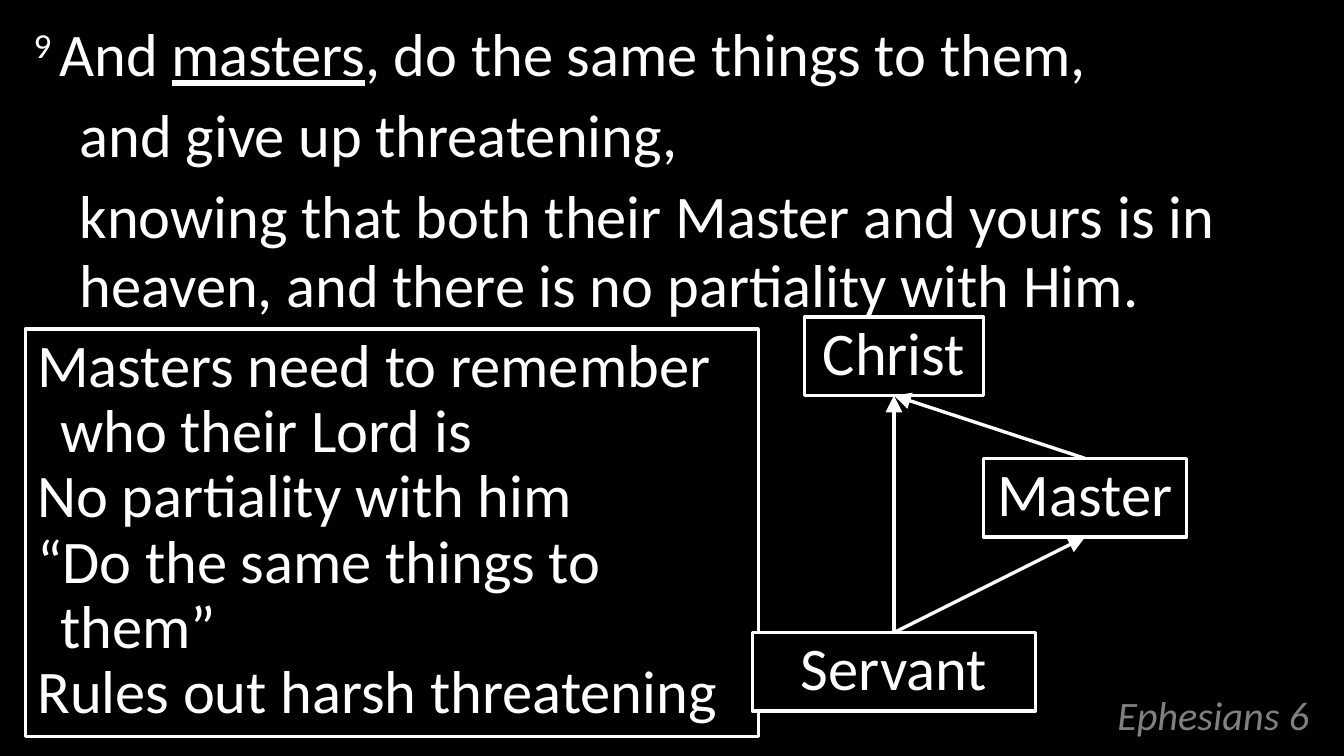
from dataclasses import dataclass

from lxml.etree import SubElement
from pptx import Presentation
from pptx.dml.color import RGBColor
from pptx.enum.shapes import MSO_CONNECTOR, MSO_SHAPE
from pptx.enum.text import MSO_ANCHOR, PP_ALIGN
from pptx.oxml.ns import qn
from pptx.shapes.autoshape import Shape
from pptx.slide import Slide
from pptx.util import Emu, Pt

PX = 9144
TOP, BOTTOM = 0, 2


@dataclass(frozen=True)
class Theme:
    font: str = "Calibri"
    back: RGBColor = RGBColor(0, 0, 0)
    ink: RGBColor = RGBColor(255, 255, 255)
    muted: RGBColor = RGBColor(128, 128, 128)
    text_size: int = 36
    reference_size: int = 24
    line_width: int = 2


@dataclass(frozen=True)
class Area:
    left: int
    top: int
    width: int
    height: int

    def emu(self) -> list[Emu]:
        return [px(v) for v in (self.left, self.top, self.width, self.height)]


@dataclass(frozen=True)
class Style:
    size: int
    color: RGBColor
    align: PP_ALIGN = PP_ALIGN.LEFT
    spacing: float = 0.9
    before: float = 0
    margin: int = 0
    indent: int = 0
    italic: bool = False


@dataclass(frozen=True)
class Span:
    text: str
    underline: bool = False
    raised: bool = False


@dataclass(frozen=True)
class Box:
    key: str
    area: Area
    lines: tuple[str, ...]
    align: PP_ALIGN = PP_ALIGN.CENTER


@dataclass(frozen=True)
class Arrow:
    start: str
    start_side: int
    end: str
    end_side: int


THEME = Theme()

VERSE_AREA = Area(18, 13, 1074, 255)
VERSE = (
    (Span("9 ", raised=True), Span("And "), Span("masters", underline=True),
     Span(", do the same things to them,")),
    (Span("and give up threatening,"),),
    (Span("knowing that both their Master and yours is in heaven, "
          "and there is no partiality with Him."),),
)
REFERENCE_AREA = Area(705, 562, 387, 53)
REFERENCE = "Ephesians 6"

BOXES = (
    Box("master", Area(813, 379, 168, 65), ("Master",)),
    Box("christ", Area(665, 262, 148, 65), ("Christ",)),
    Box("lessons", Area(21, 272, 606, 337), (
        "Masters need to remember who their Lord is",
        "No partiality with him",
        "“Do the same things to them”",
        "Rules out harsh threatening",
    ), PP_ALIGN.LEFT),
    Box("servant", Area(622, 523, 234, 65), ("Servant",)),
)
ARROWS = (
    Arrow("servant", TOP, "master", BOTTOM),
    Arrow("servant", TOP, "christ", BOTTOM),
    Arrow("master", TOP, "christ", BOTTOM),
)


def px(value: int) -> Emu:
    return Emu(value * PX)


def add_paragraph(s: Shape, first: bool, spans: tuple[Span, ...], style: Style) -> None:
    tf = s.text_frame
    p = tf.paragraphs[0] if first else tf.add_paragraph()
    p.alignment = style.align
    p.line_spacing = style.spacing
    p.space_before = Pt(style.before)
    p.font.name = THEME.font
    p.font.size = Pt(style.size)
    p.font.color.rgb = style.color
    p.font.italic = style.italic
    pPr = p._p.get_or_add_pPr()
    pPr.set("marL", str(px(style.margin)))
    pPr.set("indent", str(px(style.indent)))
    for span in spans:
        r = p.add_run()
        r.text = span.text
        if span.underline:
            r.font.underline = True
        if span.raised:
            r._r.get_or_add_rPr().set("baseline", "30000")


def add_text(slide: Slide, area: Area, anchor: MSO_ANCHOR) -> Shape:
    s = slide.shapes.add_textbox(*area.emu())
    s.text_frame.word_wrap = True
    s.text_frame.vertical_anchor = anchor
    return s


def add_box(slide: Slide, box: Box) -> Shape:
    s = slide.shapes.add_shape(MSO_SHAPE.RECTANGLE, *box.area.emu())
    s.shadow.inherit = False
    s.fill.solid()
    s.fill.fore_color.rgb = THEME.back
    s.line.color.rgb = THEME.ink
    s.line.width = Pt(THEME.line_width)
    s.text_frame.word_wrap = True
    s.text_frame.vertical_anchor = MSO_ANCHOR.TOP
    style = Style(THEME.text_size, THEME.ink, box.align, margin=19, indent=-19)
    for i, line in enumerate(box.lines):
        add_paragraph(s, i == 0, (Span(line),), style)
    return s


def add_arrow(slide: Slide, arrow: Arrow, boxes: dict[str, Shape]) -> None:
    s = slide.shapes.add_connector(MSO_CONNECTOR.STRAIGHT, 0, 0, 0, 0)
    s.begin_connect(boxes[arrow.start], arrow.start_side)
    s.end_connect(boxes[arrow.end], arrow.end_side)
    s.line.color.rgb = THEME.ink
    s.line.width = Pt(THEME.line_width)
    SubElement(s.line._get_or_add_ln(), qn("a:tailEnd"),
               type="triangle", w="lg", len="lg")
    SubElement(s._element.spPr, qn("a:effectLst"))


def main() -> None:
    prs = Presentation()
    prs.slide_width, prs.slide_height = px(1111), px(625)
    slide = prs.slides.add_slide(prs.slide_layouts[6])
    slide.background.fill.solid()
    slide.background.fill.fore_color.rgb = THEME.back

    reference = add_text(slide, REFERENCE_AREA, MSO_ANCHOR.BOTTOM)
    add_paragraph(reference, True, (Span(REFERENCE),), Style(
        THEME.reference_size, THEME.muted, PP_ALIGN.RIGHT, 0.8, italic=True))

    verse = add_text(slide, VERSE_AREA, MSO_ANCHOR.TOP)
    for i, spans in enumerate(VERSE):
        add_paragraph(verse, i == 0, spans, Style(
            THEME.text_size, THEME.ink, spacing=0.95, before=7.2,
            margin=38, indent=-38 if i == 0 else 0))

    boxes = {box.key: add_box(slide, box) for box in BOXES}
    for arrow in ARROWS:
        add_arrow(slide, arrow, boxes)

    prs.save("out.pptx")


if __name__ == "__main__":
    main()
